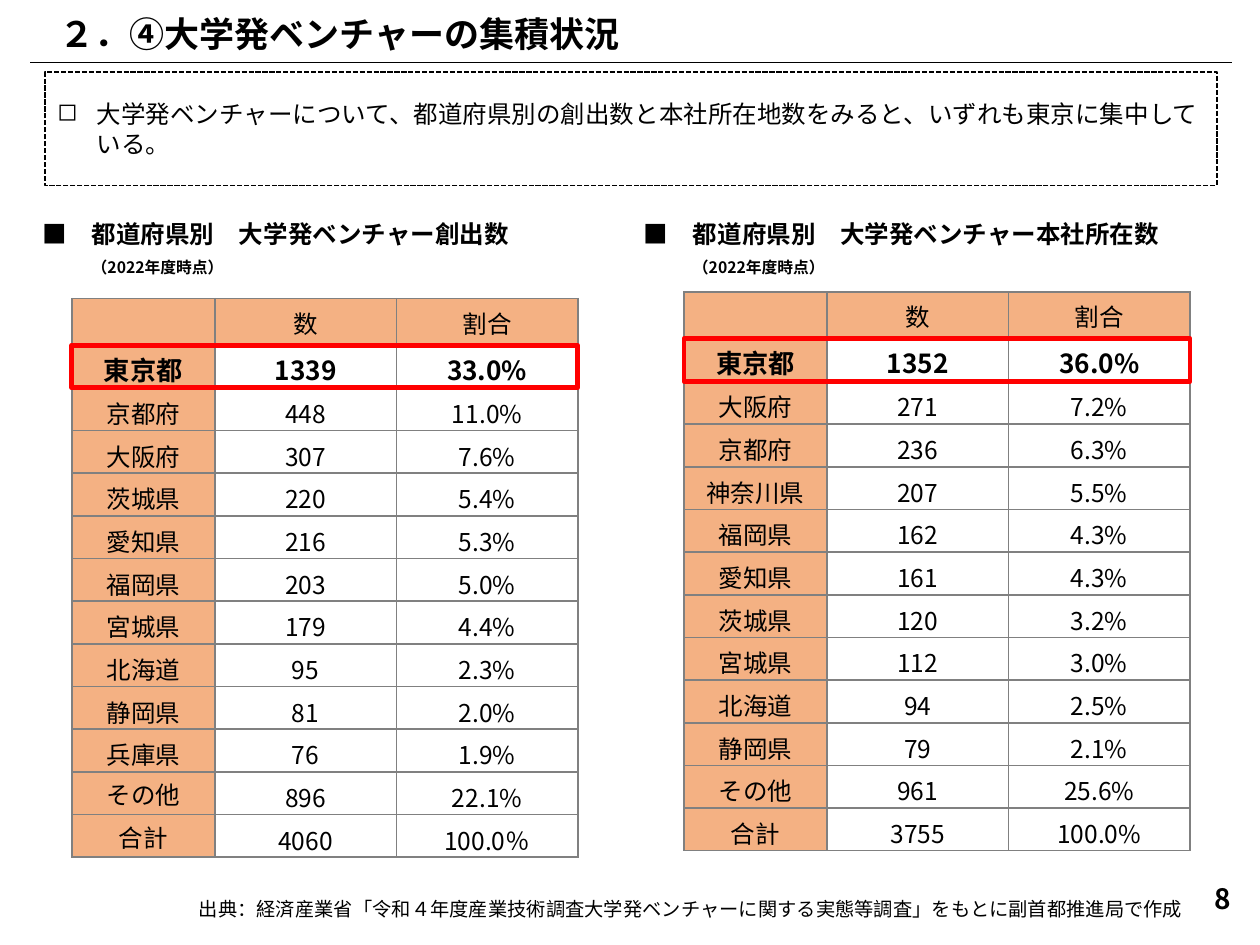
from dataclasses import dataclass

import pptx
import pptx.dml.color
import pptx.enum.dml
import pptx.enum.shapes
import pptx.enum.text
import pptx.oxml
import pptx.oxml.ns
import pptx.util

Cm, Pt = pptx.util.Cm, pptx.util.Pt
ALIGN = pptx.enum.text.PP_ALIGN
ANCHOR = pptx.enum.text.MSO_ANCHOR
RECT = pptx.enum.shapes.MSO_SHAPE.RECTANGLE
qn = pptx.oxml.ns.qn


@dataclass(frozen=True)
class Theme:
    font: str = "Noto Sans CJK JP"
    ink: str = "000000"
    header: str = "F4B183"
    grid: str = "808080"
    accent: str = "FF0000"
    title: int = 20
    number: int = 16
    strong: int = 15
    body: int = 14
    source: int = 11
    note: int = 9


def rgb(value):
    return pptx.dml.color.RGBColor.from_string(value)


class Deck:
    def __init__(self, theme, width, height):
        self.theme = theme
        self.prs = pptx.Presentation()
        self.prs.slide_width, self.prs.slide_height = Cm(width), Cm(height)
        self.s = self.prs.slides.add_slide(self.prs.slide_layouts[5])

    def format(self, p, size, bold=False, align=ALIGN.LEFT):
        p.alignment = align
        for r in p.runs:
            r.font.name, r.font.size, r.font.bold = self.theme.font, Pt(size), bold
            r.font.color.rgb = rgb(self.theme.ink)
            ea = pptx.oxml.parse_xml(
                f'<a:ea {pptx.oxml.ns.nsdecls("a")} typeface="{self.theme.font}"/>')
            r.font._element.find(qn("a:latin")).addnext(ea)

    def indent(self, p, left, first=0):
        pPr = p._p.get_or_add_pPr()
        pPr.set("marL", str(Cm(left)))
        pPr.set("indent", str(Cm(first)))
        return pPr

    def title(self, text, *box):
        sp = self.s.shapes.title
        sp.left, sp.top, sp.width, sp.height = map(Cm, box)
        tf = sp.text_frame
        tf.text = text
        tf.auto_size = pptx.enum.text.MSO_AUTO_SIZE.NONE
        tf.vertical_anchor = ANCHOR.TOP
        self.format(tf.paragraphs[0], self.theme.title, True)

    def text(self, text, size, *box, bold=False, align=ALIGN.LEFT):
        tf = self.s.shapes.add_textbox(*map(Cm, box)).text_frame
        tf.word_wrap = True
        tf.text = text
        self.format(tf.paragraphs[0], size, bold, align)
        return tf

    def heading(self, text, note, *box):
        tf = self.text(text, self.theme.body, *box, bold=True)
        p = tf.add_paragraph()
        p.text = note
        p.space_before = Pt(5.5)
        self.indent(p, 0.99)
        self.format(p, self.theme.note, True)

    def rule(self, x1, x2, y):
        line = self.s.shapes.add_connector(
            pptx.enum.shapes.MSO_CONNECTOR.STRAIGHT, Cm(x1), Cm(y), Cm(x2), Cm(y))
        line.line.color.rgb = rgb(self.theme.ink)
        line.line.width = Pt(0.5)
        line._element.spPr.append(pptx.oxml.parse_xml(
            f'<a:effectLst {pptx.oxml.ns.nsdecls("a")}/>'))

    def frame(self, color, weight, *box):
        sp = self.s.shapes.add_shape(RECT, *map(Cm, box))
        sp.shadow.inherit = False
        sp.fill.background()
        sp.line.color.rgb = rgb(color)
        sp.line.width = Pt(weight)
        return sp

    def summary(self, text, *box):
        sp = self.frame(self.theme.ink, 1, *box)
        sp.line.dash_style = pptx.enum.dml.MSO_LINE.SQUARE_DOT
        tf = sp.text_frame
        tf.word_wrap = True
        tf.vertical_anchor = ANCHOR.MIDDLE
        tf.text = text
        p = tf.paragraphs[0]
        self.format(p, self.theme.body)
        self.indent(p, 0.79, -0.79).append(pptx.oxml.parse_xml(
            f'<a:buChar {pptx.oxml.ns.nsdecls("a")} char="◻"/>'))

    def cell(self, cell, text, filled, anchor, strong):
        cell.margin_left = cell.margin_right = cell.margin_top = Cm(0.02)
        cell.margin_bottom = 0
        cell.vertical_anchor = anchor
        cell.text = text
        size = self.theme.strong if strong else self.theme.body
        self.format(cell.text_frame.paragraphs[0], size, strong, ALIGN.CENTER)
        if filled:
            cell.fill.solid()
            cell.fill.fore_color.rgb = rgb(self.theme.header)
        else:
            cell.fill.background()
        tcPr = cell._tc.get_or_add_tcPr()
        for i, side in enumerate("LRTB"):
            tcPr.insert(i, pptx.oxml.parse_xml(
                f'<a:ln{side} {pptx.oxml.ns.nsdecls("a")} w="{Pt(1)}"><a:solidFill>'
                f'<a:srgbClr val="{self.theme.grid}"/></a:solidFill></a:ln{side}>'))

    def ranking(self, rows, left, top, centred=()):
        widths, head, step = (2.88, 3.66, 3.66), 0.94, 0.86
        rows = [("", "数", "割合"), *rows]
        table = self.s.shapes.add_table(
            len(rows), len(widths), Cm(left), Cm(top), Cm(sum(widths)),
            Cm(head + step * (len(rows) - 1))).table
        table.first_row = table.horz_banding = False
        for column, width in zip(table.columns, widths):
            column.width = Cm(width)
        for i, row in enumerate(rows):
            table.rows[i].height = Cm(step if i else head)
            for j, text in enumerate(row):
                middle = i == 0 or text in centred
                self.cell(table.cell(i, j), text, i == 0 or j == 0,
                          ANCHOR.MIDDLE if middle else ANCHOR.BOTTOM, i == 1)
        self.frame(self.theme.accent, 2.75, left, top + head, sum(widths), step)


FOUNDED = [
    ("東京都", "1339", "33.0%"), ("京都府", "448", "11.0%"),
    ("大阪府", "307", "7.6%"), ("茨城県", "220", "5.4%"),
    ("愛知県", "216", "5.3%"), ("福岡県", "203", "5.0%"),
    ("宮城県", "179", "4.4%"), ("北海道", "95", "2.3%"),
    ("静岡県", "81", "2.0%"), ("兵庫県", "76", "1.9%"),
    ("その他", "896", "22.1%"), ("合計", "4060", "100.0％"),
]
HEADQUARTERS = [
    ("東京都", "1352", "36.0%"), ("大阪府", "271", "7.2%"),
    ("京都府", "236", "6.3%"), ("神奈川県", "207", "5.5%"),
    ("福岡県", "162", "4.3%"), ("愛知県", "161", "4.3%"),
    ("茨城県", "120", "3.2%"), ("宮城県", "112", "3.0%"),
    ("北海道", "94", "2.5%"), ("静岡県", "79", "2.1%"),
    ("その他", "961", "25.6%"), ("合計", "3755", "100.0%"),
]


def main():
    theme = Theme()
    deck = Deck(theme, 25.4, 19.05)
    deck.title("２．④大学発ベンチャーの集積状況", 0.94, 0.13, 23.62, 1.11)
    deck.rule(0.61, 24.84, 1.25)
    deck.summary("大学発ベンチャーについて、都道府県別の創出数と本社所在地数をみると、"
                 "いずれも東京に集中している。", 0.91, 1.45, 23.62, 2.29)
    note = "（2022年度時点）"
    deck.heading("■　都道府県別　大学発ベンチャー創出数", note, 0.61, 4.29, 11.8, 1.45)
    deck.heading("■　都道府県別　大学発ベンチャー本社所在数", note, 12.73, 4.29, 12.6, 1.45)
    deck.ranking(FOUNDED, 1.45, 6.02, centred=("その他", "合計"))
    deck.ranking(HEADQUARTERS, 13.79, 5.89)
    deck.text("出典：経済産業省「令和４年度産業技術調査大学発ベンチャーに関する実態等調査」"
              "をもとに副首都推進局で作成", theme.source, 3.76, 17.96, 21.31, 0.74)
    deck.text("8", theme.number, 19.35, 17.65, 5.72, 1.02, bold=True, align=ALIGN.RIGHT)
    deck.prs.save("out.pptx")


if __name__ == "__main__":
    main()
